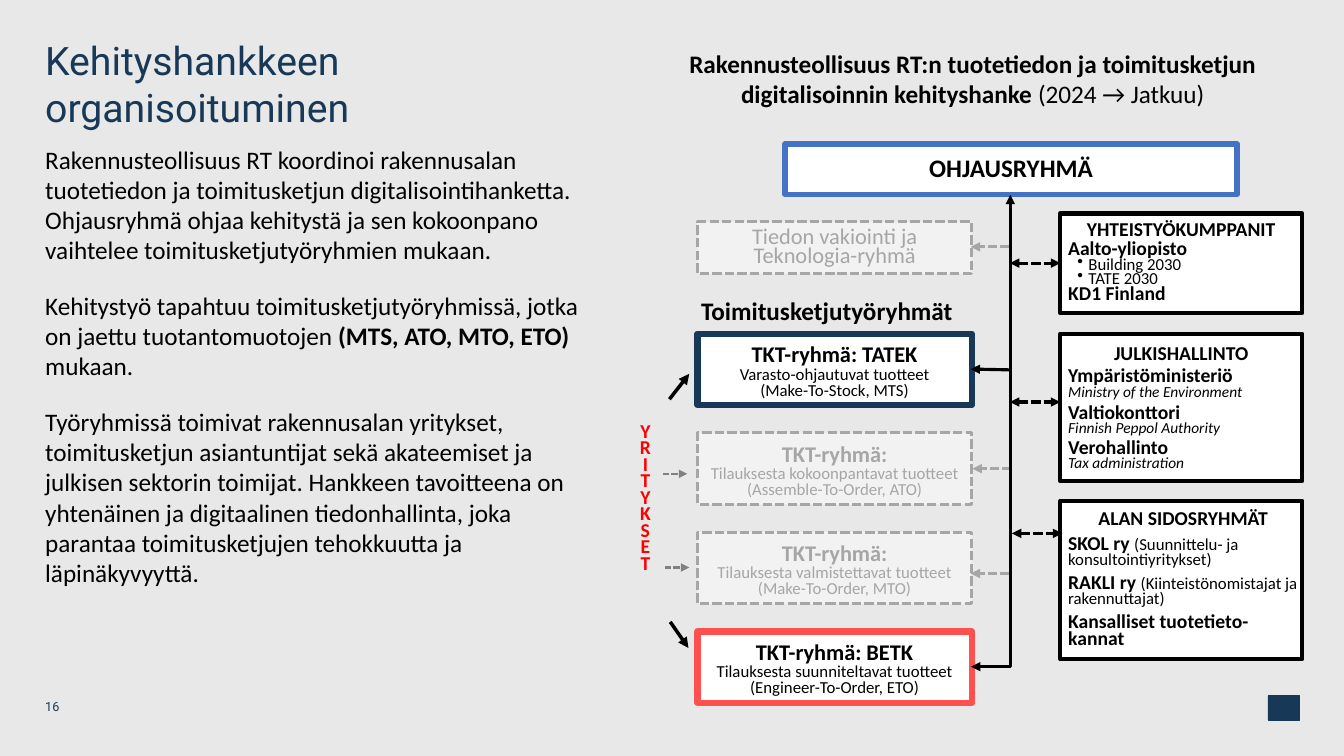
import pptx
import pptx.util
import pptx.dml.color
import pptx.enum.dml
import pptx.enum.shapes
import pptx.enum.text
import pptx.oxml
import pptx.oxml.ns

Cm = pptx.util.Cm
Pt = pptx.util.Pt
RGBColor = pptx.dml.color.RGBColor
qn = pptx.oxml.ns.qn
RECTANGLE = pptx.enum.shapes.MSO_SHAPE.RECTANGLE
STRAIGHT = pptx.enum.shapes.MSO_CONNECTOR.STRAIGHT
DASHED = pptx.enum.dml.MSO_LINE.SQUARE_DOT
TOP = pptx.enum.text.MSO_ANCHOR.TOP
MIDDLE = pptx.enum.text.MSO_ANCHOR.MIDDLE
CENTER = pptx.enum.text.PP_ALIGN.CENTER

BACKGROUND = RGBColor(0xE8, 0xE8, 0xE8)
NAVY = RGBColor(0x18, 0x38, 0x58)
BLUE = RGBColor(0x44, 0x72, 0xC4)
CORAL = RGBColor(0xFF, 0x50, 0x50)
RED = RGBColor(0xFF, 0x00, 0x00)
BLACK = RGBColor(0x00, 0x00, 0x00)
WHITE = RGBColor(0xFF, 0xFF, 0xFF)
PALE = RGBColor(0xF2, 0xF2, 0xF2)
SILVER = RGBColor(0xA6, 0xA6, 0xA6)
GRAY = RGBColor(0x80, 0x80, 0x80)

BOLD = {"bold": True}
ITALIC = {"italic": True}
PLAIN = {}

deck = pptx.Presentation()
deck.slide_width, deck.slide_height = Cm(33.87), Cm(19.05)
page = deck.slides.add_slide(deck.slide_layouts[6])
page.background.fill.solid()
page.background.fill.fore_color.rgb = BACKGROUND


def add_box(place, insets, paras, color=BLACK, font="Calibri", anchor=TOP,
            wrap=True, fill=None, outline=None):
    """Text box, or a rectangle when fill is given; outline is (colour, points, dash)."""
    place = [Cm(length) for length in place]
    if fill is None:
        box = page.shapes.add_textbox(*place)
    else:
        box = page.shapes.add_shape(RECTANGLE, *place)
        box.shadow.inherit = False
        box.fill.solid()
        box.fill.fore_color.rgb = fill
        box.line.color.rgb, box.line.width = outline[0], Pt(outline[1])
        box.line.dash_style = outline[2]
    frame = box.text_frame
    left, top, right, bottom = [Cm(inset) for inset in insets]
    frame_format = {"word_wrap": wrap, "vertical_anchor": anchor, "margin_left": left,
                    "margin_top": top, "margin_right": right, "margin_bottom": bottom}
    for name, value in frame_format.items():
        setattr(frame, name, value)
    for index, (para_format, spans) in enumerate(paras):
        para = frame.add_paragraph() if index else frame.paragraphs[0]
        para.alignment = pptx.enum.text.PP_ALIGN.LEFT
        for name, value in para_format.items():
            if name != "bullet":
                setattr(para, name, value)
        if "bullet" in para_format:
            properties = para._p.get_or_add_pPr()
            properties.set("marL", str(Cm(0.51)))
            properties.set("indent", str(Cm(-0.28)))
            bullet = pptx.oxml.parse_xml(
                f'<a:buChar {pptx.oxml.ns.nsdecls("a")} char="{para_format["bullet"]}"/>')
            properties.append(bullet)
        for text, size, style in spans:
            span = para.add_run()
            span.text = text
            span_format = {"name": font, "size": Pt(size), "bold": False, **style}
            for name, value in span_format.items():
                setattr(span.font, name, value)
            span.font.color.rgb = color
    return box


def add_arrow(start, end, color=BLACK, width=2.25, dash=None, ends=("tail",), kind=STRAIGHT):
    arrow = page.shapes.add_connector(kind, *[Cm(length) for length in (*start, *end)])
    arrow.line.color.rgb, arrow.line.width = color, Pt(width)
    arrow.line.dash_style = dash
    for name in ends:
        pptx.oxml.ns.qn("a:ln")
        tip = arrow.line._get_or_add_ln().makeelement(qn(f"a:{name}End"), {"type": "triangle"})
        arrow.line._get_or_add_ln().append(tip)
    properties = arrow._element.spPr
    properties.append(properties.makeelement(qn("a:effectLst"), {}))
    return arrow


# Title, page number and plain mark in the corner
NO_INSETS = (0, 0, 0, 0)
add_box((1.14, 0.91, 14.55, 2.82), NO_INSETS,
        [({}, [("Kehityshankkeen organisoituminen", 28, PLAIN)])], NAVY, "Roboto")
add_box((1.14, 17.73, 0.94, 0.13), NO_INSETS, [({}, [("16", 9, PLAIN)])],
        NAVY, "Roboto", MIDDLE)
add_box((31.95, 17.53, 0.79, 0.61), NO_INSETS, [], fill=NAVY, outline=(NAVY, 0.25, None))

# Body text
add_box((1.14, 3.63, 13.92, 13.28), NO_INSETS, [
    ({"space_after": Pt(12)}, [
        ("Rakennusteollisuus RT koordinoi rakennusalan tuotetiedon ja toimitusketjun "
         "digitalisointihanketta. Ohjausryhmä ohjaa kehitystä ja sen kokoonpano vaihtelee "
         "toimitusketjutyöryhmien mukaan.", 18, PLAIN)]),
    ({"space_before": Pt(6), "space_after": Pt(12)}, [
        ("Kehitystyö tapahtuu toimitusketjutyöryhmissä, jotka on jaettu tuotantomuotojen ",
         18, PLAIN), ("(MTS, ATO, MTO, ETO) ", 18, BOLD), ("mukaan.", 18, PLAIN)]),
    ({"space_before": Pt(6)}, [
        ("Työryhmissä toimivat rakennusalan yritykset, toimitusketjun asiantuntijat sekä "
         "akateemiset ja julkisen sektorin toimijat. Hankkeen tavoitteena on yhtenäinen ja "
         "digitaalinen tiedonhallinta, joka parantaa toimitusketjujen tehokkuutta ja "
         "läpinäkyvyyttä.", 18, PLAIN)])])

# Chart headings
TEXT_INSETS = (0.25, 0.13, 0.25, 0.13)
add_box((15.7, 1.09, 17.63, 1.8), TEXT_INSETS, [({"alignment": CENTER}, [
    ("Rakennusteollisuus RT:n tuotetiedon ja toimitusketjun digitalisoinnin kehityshanke ",
     18, BOLD), ("(2024 → Jatkuu)", 18, PLAIN)])])
add_box((17.42, 7.32, 7.92, 1.02), TEXT_INSETS,
        [({}, [("Toimitusketjutyöryhmät", 18, BOLD)])], wrap=False)

# Steering group and technology group
TIGHT = {"line_spacing": 0.7}
SNUG = {"line_spacing": 0.8}
TIGHT_CENTER = {"alignment": CENTER, **TIGHT}
SNUG_CENTER = {"alignment": CENTER, **SNUG}
add_box((19.79, 3.63, 11.38, 1.27), (0.25, 0.41, 0.25, 0.3),
        [(TIGHT_CENTER, [("OHJAUSRYHMÄ", 18, BOLD)])], fill=WHITE, outline=(BLUE, 4, None))
add_box((17.58, 5.59, 6.91, 1.3), (0.25, 0.2, 0.25, 0.1),
        [(TIGHT_CENTER, [("Tiedon vakiointi ja Teknologia-ryhmä", 16, PLAIN)])],
        SILVER, fill=PALE, outline=(SILVER, 2.25, DASHED))

# Supply chain groups, evenly stacked
ACTIVE_TATEK = (BLACK, WHITE, (NAVY, 4.5, None))
ACTIVE_BETK = (BLACK, WHITE, (CORAL, 4.5, None))
PENDING = (SILVER, PALE, (SILVER, 2.25, DASHED))
supply_groups = [
    ("TKT-ryhmä: TATEK", "Varasto-ohjautuvat tuotteet", "(Make-To-Stock, MTS)", ACTIVE_TATEK),
    ("TKT-ryhmä:", "Tilauksesta kokoonpantavat tuotteet", "(Assemble-To-Order, ATO)", PENDING),
    ("TKT-ryhmä:", "Tilauksesta valmistettavat tuotteet", "(Make-To-Order, MTO)", PENDING),
    ("TKT-ryhmä: BETK", "Tilauksesta suunniteltavat tuotteet", "(Engineer-To-Order, ETO)",
     ACTIVE_BETK)]
for row, (group, products, mode, (color, fill, outline)) in enumerate(supply_groups):
    lines = [(group, 16, BOLD), (products, 12, PLAIN), (mode, 12, PLAIN)]
    add_box((17.58, 8.41 + 2.5 * row, 6.91, 1.8), (0, 0.3, 0, 0.13),
            [(SNUG_CENTER, [line]) for line in lines], color, fill=fill, outline=outline)

# Partner boxes
BULLETED = {"bullet": "•", **TIGHT}
SPACED = {"space_before": Pt(6), **TIGHT}
OFFICE = {"space_before": Pt(4), **TIGHT}
partner_boxes = [
    (5.38, 2.51, (0.2, 0.2, 0.2, 0.2), [
        (SNUG_CENTER, [("YHTEISTYÖKUMPPANIT", 14, BOLD)]),
        (SNUG, [("Aalto-yliopisto", 14, BOLD)]),
        (BULLETED, [("Building 2030", 12, PLAIN)]),
        (BULLETED, [("TATE 2030", 12, PLAIN)]),
        (TIGHT, [("KD1 Finland", 14, BOLD)])]),
    (8.41, 3.71, (0.2, 0.3, 0.2, 0.2), [
        (SNUG_CENTER, [("JULKISHALLINTO", 14, BOLD)]),
        ({"space_before": Pt(2), **SNUG}, [("Ympäristöministeriö", 14, BOLD)]),
        (SNUG, [("Ministry of the Environment", 11, ITALIC)]),
        (OFFICE, [("Valtiokonttori", 14, BOLD)]),
        (TIGHT, [("Finnish Peppol Authority", 11, ITALIC)]),
        (OFFICE, [("Verohallinto", 14, BOLD)]),
        (TIGHT, [("Tax administration", 11, ITALIC)])]),
    (12.62, 3.99, (0.2, 0.3, 0.1, 0.2), [
        (TIGHT_CENTER, [("ALAN SIDOSRYHMÄT", 14, BOLD)]),
        (SPACED, [("SKOL ry ", 14, BOLD), ("(Suunnittelu- ja konsultointiyritykset)", 12, PLAIN)]),
        (SPACED, [("RAKLI ry ", 14, BOLD),
                  ("(Kiinteistönomistajat ja rakennuttajat)", 12, PLAIN)]),
        (SPACED, [("Kansalliset tuotetieto-kannat", 14, BOLD)])])]
for top, height, insets, paras in partner_boxes:
    add_box((26.72, top, 6.1, height), insets, paras, fill=WHITE, outline=(BLACK, 3, None))

# Arrows from the trunk to the groups and to the partners
add_arrow((25.45, 9.32), (24.46, 9.3))
for x, y in [(25.45, 6.22), (25.5, 11.81), (25.45, 14.45)]:
    add_arrow((x, y), (x - 0.99, y), SILVER, dash=DASHED)
for x, y in [(25.45, 6.63), (25.45, 10.13), (25.5, 13.44)]:
    add_arrow((x, y), (x + 1.27, y), dash=DASHED, ends=("head", "tail"))

# Trunk: one bend, turned a quarter so that it runs down and then left
trunk = add_arrow((19.02, 10.36), (30.91, 11.35), ends=("head", "tail"),
                  kind=pptx.enum.shapes.MSO_CONNECTOR.ELBOW)
trunk._element.spPr.find(qn("a:prstGeom")).set("prst", "bentConnector2")
trunk._element.spPr.find(qn("a:xfrm")).set("rot", "5400000")

# Companies: upright label and its arrows
companies = add_box((15.72, 9.27, 1.19, 6.63), (0, 0, 0.1, 0),
                    [(TIGHT_CENTER, [("YRITYKSET", 14, BOLD)])], RED, anchor=MIDDLE)
companies.text_frame._txBody.bodyPr.set("vert", "wordArtVert")
companies.text_frame.paragraphs[0].runs[0].font._element.set("spc", "-300")
add_arrow((16.87, 10.06), (17.37, 9.42), width=2.5)
add_arrow((16.71, 11.94), (17.32, 11.94), GRAY, 1.5, DASHED)
add_arrow((16.76, 14.3), (17.37, 14.3), GRAY, 1.5, DASHED)
add_arrow((16.89, 15.67), (17.35, 16.33), width=2.5)

deck.save("out.pptx")
